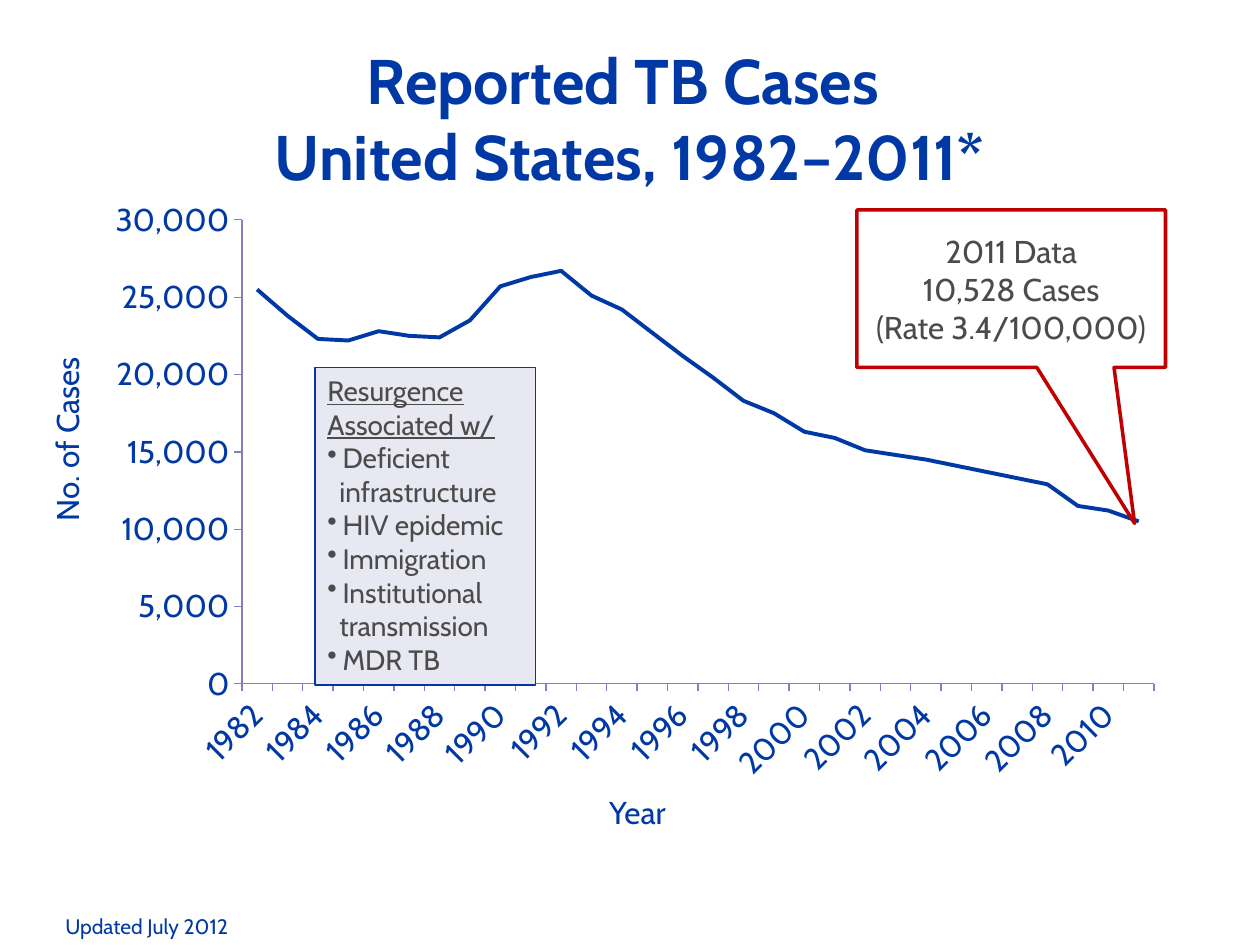
from pptx import Presentation
from pptx import util as u
from pptx.chart.data import CategoryChartData
from pptx.dml.color import RGBColor
from pptx.enum import chart as charts, shapes, text
from pptx.oxml import parse_xml
from pptx.oxml.ns import nsdecls, qn

COLORS = {"blue": "0039A6", "axis": "8080C0", "gray": "4B4B4B", "red": "C00000", "panel": "E7E8F1"}
FONT = "Cabin"
FIRST_YEAR = 1982
CASES = [25500, 23800, 22300, 22200, 22800, 22500, 22400, 23500, 25700, 26300,
         26700, 25100, 24200, 22700, 21200, 19800, 18300, 17500, 16300, 15900,
         15100, 14800, 14500, 14100, 13700, 13300, 12900, 11500, 11200, 10500]
CHART_BOX = (54, 108, 617.76, 346.32)
PLOT_BOX = {"x": 0.1364, "y": 0.051, "w": 0.8437, "h": 0.7657}

BOTTOM = {"vertical_anchor": text.MSO_ANCHOR.BOTTOM}
LABELS = [
    ("No. of Cases", (-70.92, 232.92, 225.36, 36), 18, False, "CENTER", -90, {}),
    ("Year", (251.64, 449.64, 225.36, 36), 18, False, "CENTER", 0, {}),
    ("Reported TB Cases \vUnited States, 1982–2011*", (36, 21.6, 648, 90), 36, True, "CENTER", 0,
     {**BOTTOM, "margin_top": 0, "margin_bottom": u.Pt(1.4)}),
    ("Updated July 2012", (30.24, 516.24, 365.76, 23.76), 12, False, "JUSTIFY", 0, BOTTOM),
]
LATEST = ["2011 Data", "10,528 Cases", "(Rate 3.4/100,000)"]
CAUSES = [("Resurgence", "heading"), ("Associated w/", "heading"),
          ("Deficient", "bullet"), ("infrastructure", "continued"),
          ("HIV epidemic", "bullet"), ("Immigration", "bullet"),
          ("Institutional", "bullet"), ("transmission", "continued"),
          ("MDR TB", "bullet")]
INDENTS = {"heading": (0, 0), "bullet": (8.7, -8.7), "continued": (6.9, 0)}


def rgb(name):
    return RGBColor.from_string(COLORS[name])


def apply(target, values):
    for key, value in values.items():
        setattr(target, key, value)


def style(font, size, color, **extra):
    apply(font, {"name": FONT, "size": u.Pt(size), **extra})
    font.color.rgb = rgb(color)


def points(box):
    return [u.Pt(length) for length in box]


def add_panel(slide, preset, box, line, width, fill=None):
    panel = slide.shapes.add_shape(preset, *points(box))
    panel.shadow.inherit = False
    if fill:
        panel.fill.solid()
        panel.fill.fore_color.rgb = rgb(fill)
    else:
        panel.fill.background()
    panel.line.color.rgb = rgb(line)
    panel.line.width = u.Pt(width)
    panel.text_frame.word_wrap = True
    return panel


def add_lines(frame, lines):
    for index, line in enumerate(lines):
        paragraph = frame.paragraphs[0] if index == 0 else frame.add_paragraph()
        paragraph.text = line
        yield paragraph


def add_case_chart(slide):
    data = CategoryChartData(number_format="#,##0")
    data.categories = [str(FIRST_YEAR + offset) for offset in range(len(CASES))]
    data.add_series("Series 1", CASES)
    chart = slide.shapes.add_chart(charts.XL_CHART_TYPE.LINE, *points(CHART_BOX), data).chart
    apply(chart, {"has_legend": False, "has_title": False})
    style(chart.font, 18, "blue")

    cases = chart.plots[0].series[0]
    cases.smooth = False
    cases.marker.style = charts.XL_MARKER_STYLE.NONE
    cases.format.line.color.rgb = rgb("blue")
    cases.format.line.width = u.Pt(2.25)
    chart.plots[0].vary_by_categories = False

    years, counts = chart.category_axis, chart.value_axis
    for axis in (years, counts):
        apply(axis, {"has_major_gridlines": False, "major_tick_mark": charts.XL_TICK_MARK.OUTSIDE})
        style(axis.tick_labels.font, 18, "blue")
        axis.format.line.color.rgb = rgb("axis")
        axis.format.line.width = u.Pt(0.75)
    apply(counts, {"minimum_scale": 0, "maximum_scale": 30000, "major_unit": 5000})
    apply(counts.tick_labels, {"number_format": "#,##0", "number_format_is_linked": False})

    year_xml = years._element
    year_xml.find(qn("c:txPr")).find(qn("a:bodyPr")).set("rot", "-2700000")
    last = year_xml.find(qn("c:noMultiLvlLbl"))
    for tag, step in (("tickLblSkip", 2), ("tickMarkSkip", 1)):
        last.addprevious(parse_xml(f'<c:{tag} {nsdecls("c")} val="{step}"/>'))

    plot_area = chart._chartSpace.chart.plotArea
    for layout in plot_area.findall(qn("c:layout")):
        plot_area.remove(layout)
    modes = '<c:layoutTarget val="inner"/><c:xMode val="edge"/><c:yMode val="edge"/>'
    sizes = "".join(f'<c:{key} val="{value}"/>' for key, value in PLOT_BOX.items())
    plot_area.insert(0, parse_xml(
        f'<c:layout {nsdecls("c")}><c:manualLayout>{modes}{sizes}</c:manualLayout></c:layout>'))


def add_label(slide, words, box, size, bold, align, rotation, frame_format):
    label = slide.shapes.add_textbox(*points(box))
    label.rotation = rotation
    apply(label.text_frame, {"word_wrap": True, **frame_format})
    for paragraph in add_lines(label.text_frame, [words]):
        paragraph.alignment = getattr(text.PP_ALIGN, align)
        style(paragraph.font, size, "blue", bold=bold)


def add_latest(slide):
    callout = add_panel(slide, shapes.MSO_SHAPE.RECTANGULAR_CALLOUT,
                        (489.6, 120, 176.4, 90), "red", 2)
    callout.adjustments[0], callout.adjustments[1] = 0.4, 1.49
    callout.text_frame.vertical_anchor = text.MSO_ANCHOR.MIDDLE
    for paragraph in add_lines(callout.text_frame, LATEST):
        paragraph.alignment = text.PP_ALIGN.CENTER
        style(paragraph.font, 18, "gray")


def add_causes(slide):
    panel = add_panel(slide, shapes.MSO_SHAPE.RECTANGLE,
                      (180, 210, 126, 181.44), "blue", 0.75, "panel")
    panel.text_frame.vertical_anchor = text.MSO_ANCHOR.TOP
    paragraphs = add_lines(panel.text_frame, [words for words, _ in CAUSES])
    for paragraph, (_, role) in zip(paragraphs, CAUSES):
        paragraph.alignment = text.PP_ALIGN.LEFT
        properties = paragraph._p.get_or_add_pPr()
        for key, length in zip(("marL", "indent"), INDENTS[role]):
            properties.set(key, str(int(u.Pt(length))))
        if role == "bullet":
            properties.append(parse_xml(f'<a:buChar {nsdecls("a")} char="•"/>'))
        style(paragraph.font, 16, "gray", underline=role == "heading")


def main():
    deck = Presentation()
    apply(deck, {"slide_width": u.Pt(720), "slide_height": u.Pt(540)})
    slide = deck.slides.add_slide(deck.slide_layouts[6])
    add_case_chart(slide)
    for label in LABELS:
        add_label(slide, *label)
    add_latest(slide)
    add_causes(slide)
    deck.save("out.pptx")


if __name__ == "__main__":
    main()
